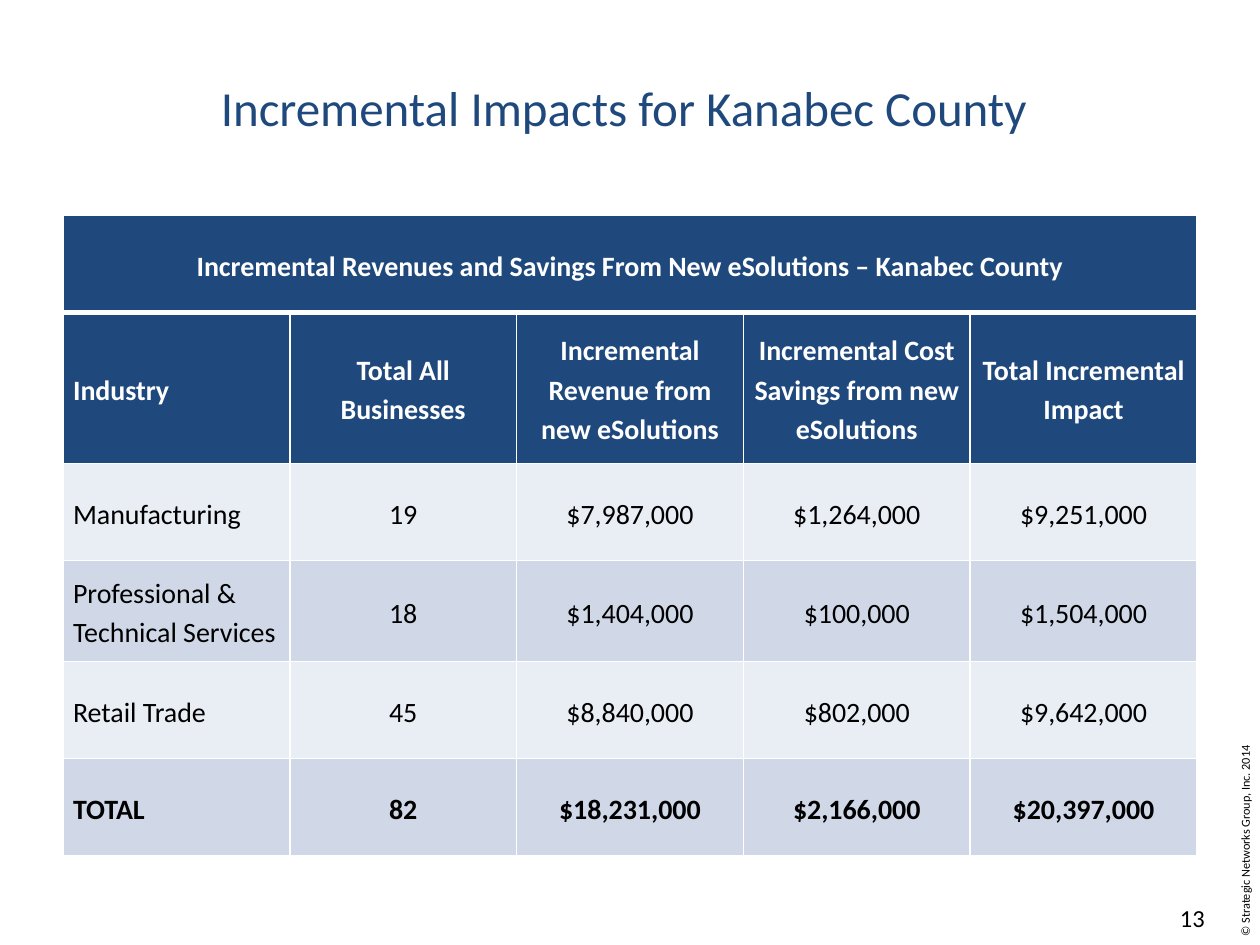
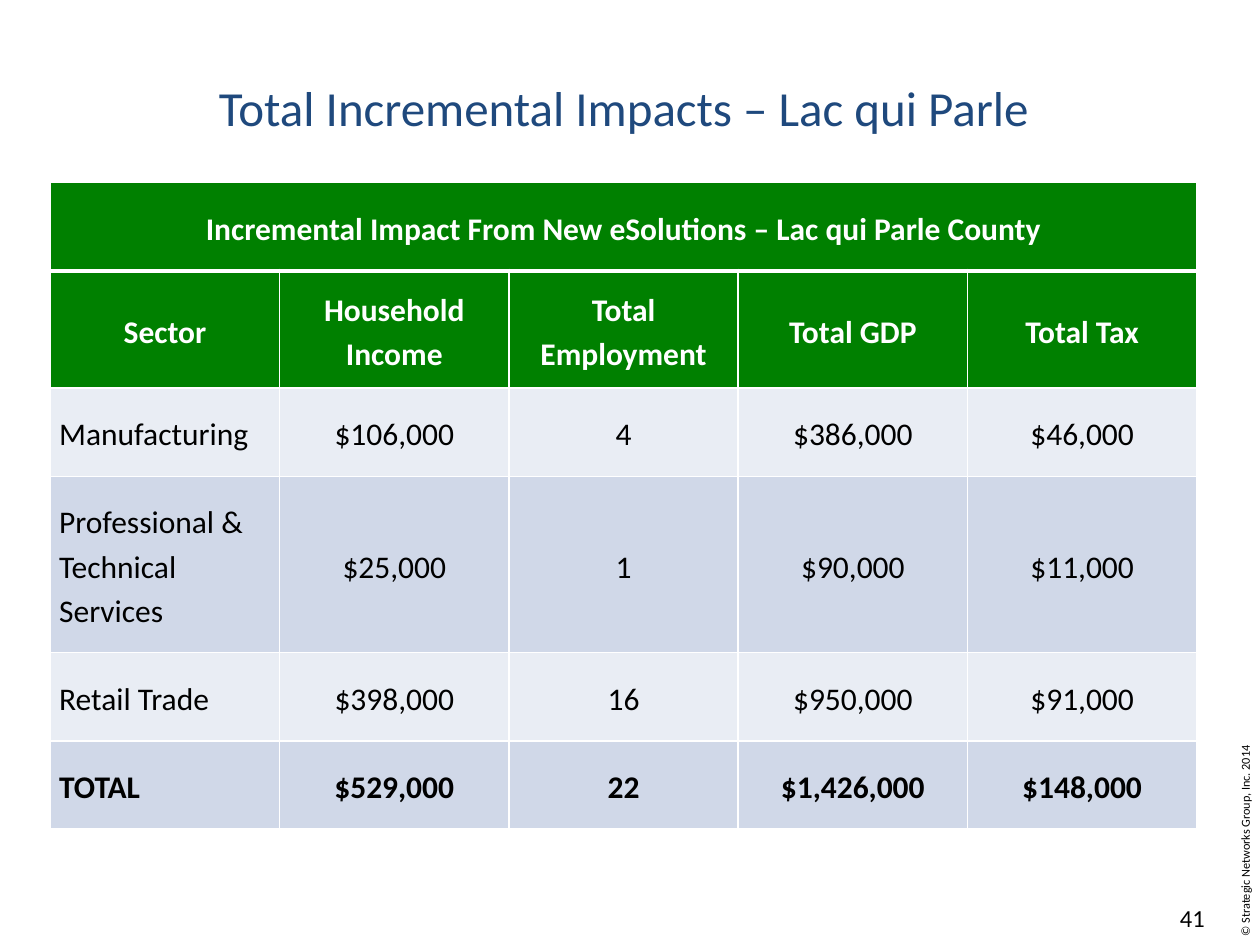
from lxml import etree
from pptx import Presentation
from pptx.dml.color import RGBColor
from pptx.enum.text import MSO_ANCHOR, PP_ALIGN
from pptx.oxml.ns import qn
from pptx.util import Inches, Pt

LEFT, CENTER, RIGHT = PP_ALIGN.LEFT, PP_ALIGN.CENTER, PP_ALIGN.RIGHT
TOP, MIDDLE = MSO_ANCHOR.TOP, MSO_ANCHOR.MIDDLE
FONT = "Calibri"
NAVY, GREEN, WHITE, BLACK = "1F497D", "008000", "FFFFFF", "000000"
BANDS = ["E9EDF4", "D0D8E8"]
CREDIT = "© Strategic Networks Group, Inc. 2014"

PAGES = [
    {
        "title": "Incremental Impacts for Kanabec County",
        "number": "13",
        "color": NAVY,
        "size": 16,
        "at": (0.5, 1.71),
        "width": 9,
        "pad": 0.08,
        "align": LEFT,
        "heights": [0.77, 1.2, 0.77, 0.8, 0.77, 0.77],
        "rows": [
            ["Incremental Revenues and Savings From New eSolutions – Kanabec County"],
            ["Industry", "Total All Businesses", "Incremental Revenue from new eSolutions",
             "Incremental Cost Savings from new eSolutions", "Total Incremental Impact"],
            ["Manufacturing", "19", "$7,987,000", "$1,264,000", "$9,251,000"],
            ["Professional & Technical Services", "18", "$1,404,000", "$100,000", "$1,504,000"],
            ["Retail Trade", "45", "$8,840,000", "$802,000", "$9,642,000"],
            ["TOTAL", "82", "$18,231,000", "$2,166,000", "$20,397,000"],
        ],
    },
    {
        "title": "Total Incremental Impacts – Lac qui Parle",
        "number": "41",
        "color": GREEN,
        "size": 18,
        "at": (0.4, 1.45),
        "width": 9.1,
        "pad": 0.07,
        "align": CENTER,
        "heights": [0.7, 0.93, 0.7, 1.4, 0.7, 0.7],
        "rows": [
            ["Incremental Impact From New eSolutions – Lac qui Parle County"],
            ["Sector", "Household Income", "Total Employment", "Total GDP", "Total Tax"],
            ["Manufacturing", "$106,000", "4", "$386,000", "$46,000"],
            ["Professional & Technical Services", "$25,000", "1", "$90,000", "$11,000"],
            ["Retail Trade", "$398,000", "16", "$950,000", "$91,000"],
            ["TOTAL", "$529,000", "22", "$1,426,000", "$148,000"],
        ],
    },
]


def write(frame, text, size, color, align, bold=False):
    """Fill a text frame with one styled paragraph, which is returned."""
    frame.word_wrap = True
    para = frame.paragraphs[0]
    para.text = text
    para.alignment = align
    para.font.name = FONT
    para.font.size = Pt(size)
    para.font.bold = bold
    para.font.color.rgb = RGBColor.from_string(color)
    return para


def edge(cell, base):
    """Draw white cell borders, the bottom one base points wide."""
    props = cell._tc.get_or_add_tcPr()
    for spot, (tag, width) in enumerate([("lnL", 1), ("lnR", 1), ("lnT", 1), ("lnB", base)]):
        line = etree.Element(qn("a:" + tag), w=str(Pt(width)))
        fill = etree.SubElement(line, qn("a:solidFill"))
        etree.SubElement(fill, qn("a:srgbClr"), val=WHITE)
        props.insert(spot, line)


deck = Presentation()
deck.slide_width, deck.slide_height = Inches(10), Inches(7.5)

for page in PAGES:
    slide = deck.slides.add_slide(deck.slide_layouts[6])

    credit = slide.shapes.add_textbox(Inches(8.99), Inches(6.47), Inches(1.78), Inches(0.26))
    credit.rotation = 270
    credit.text_frame.margin_left = Inches(0.06)
    credit.text_frame.vertical_anchor = MIDDLE
    write(credit.text_frame, CREDIT, 7, BLACK, LEFT)

    number = slide.shapes.add_textbox(Inches(7.33), Inches(7.12), Inches(2.33), Inches(0.4))
    number.text_frame.vertical_anchor = TOP
    write(number.text_frame, page["number"], 14, BLACK, RIGHT)

    title = slide.shapes.add_textbox(Inches(0.45), Inches(0.47), Inches(9), Inches(0.75))
    title.text_frame.vertical_anchor = MIDDLE
    write(title.text_frame, page["title"], 28, NAVY, CENTER)

    rows, heights = page["rows"], page["heights"]
    count, last = len(rows[1]), len(rows) - 1
    left, top = page["at"]
    table = slide.shapes.add_table(
        len(rows), count, Inches(left), Inches(top),
        Inches(page["width"]), Inches(sum(heights))).table
    for col in table.columns:
        col.width = Inches(page["width"] / count)
    table.cell(0, 0).merge(table.cell(0, count - 1))

    for r, row in enumerate(rows):
        table.rows[r].height = Inches(heights[r])
        head = r < 2
        for c in range(count):
            cell = table.cell(r, c)
            cell.vertical_anchor = MIDDLE
            cell.margin_left = cell.margin_right = Inches(page["pad"])
            cell.margin_top = cell.margin_bottom = 0
            cell.fill.solid()
            cell.fill.fore_color.rgb = RGBColor.from_string(page["color"] if head else BANDS[r % 2])
            edge(cell, 3 if r == 0 else 1)
            if c < len(row):
                align = CENTER if c or r == 0 else page["align"] if head else LEFT
                para = write(cell.text_frame, row[c], page["size"],
                             WHITE if head else BLACK, align, head or r == last)
                para.line_spacing = 1.15

deck.save("out.pptx")
